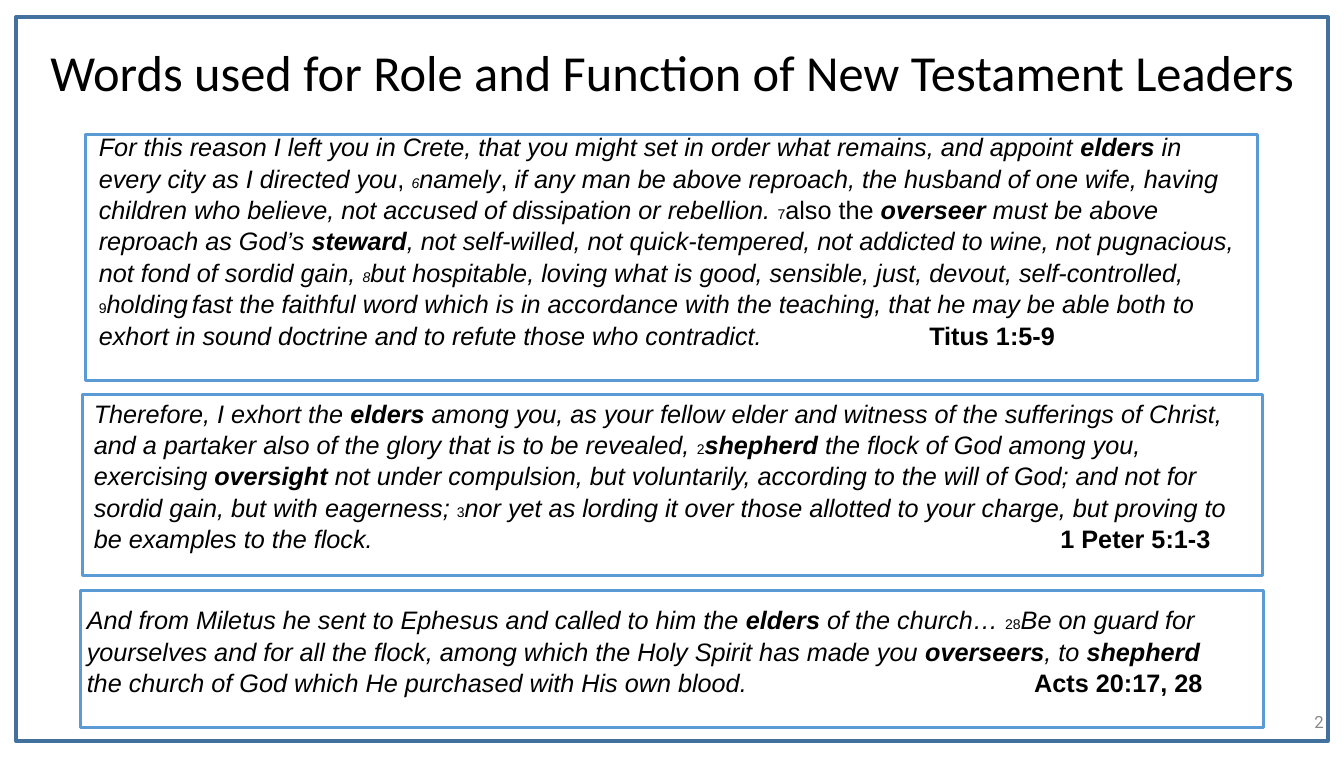
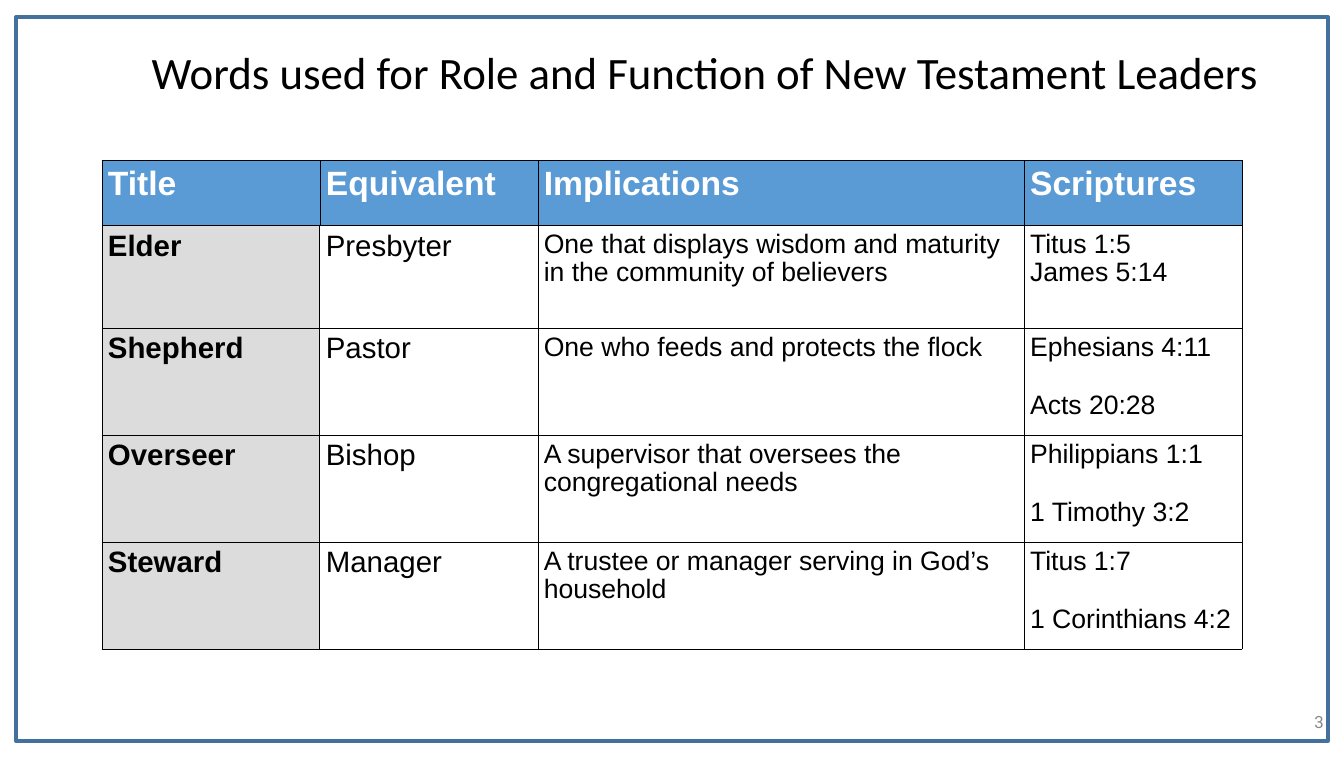
from pptx import Presentation
from pptx.dml.color import RGBColor
from pptx.enum.shapes import MSO_SHAPE
from pptx.enum.text import MSO_ANCHOR, PP_ALIGN
from pptx.oxml.ns import qn
from pptx.util import Inches, Pt
from lxml import etree

RECT = MSO_SHAPE.RECTANGLE
TOP, MIDDLE = MSO_ANCHOR.TOP, MSO_ANCHOR.MIDDLE
LEFT, CENTER, RIGHT = PP_ALIGN.LEFT, PP_ALIGN.CENTER, PP_ALIGN.RIGHT

TITLE = "Words used for Role and Function of New Testament Leaders"
BLACK, WHITE, BLUE, NAVY = "000000", "FFFFFF", "5B9BD5", "41719C"
SILVER, GREY = "DCDCDC", "898989"

# Run formats of the verses: plain, italic, bold, verse number
BASE = {"name": "Arial", "size": 18, "color": BLACK, "bold": False, "italic": False}
FORMS = {
    "n": BASE,
    "i": {**BASE, "italic": True},
    "b": {**BASE, "bold": True},
    "bi": {**BASE, "bold": True, "italic": True},
    "v": {**BASE, "size": 10},
    "vi": {**BASE, "size": 10, "italic": True},
}


def color(text):
    return RGBColor.from_string(text)


def add_xml(parent, tag, **values):
    node = etree.SubElement(parent, qn(tag))
    for key, value in values.items():
        node.set(key, str(value))
    return node


class Deck:
    def __init__(self):
        self.prs = Presentation()
        self.prs.slide_width, self.prs.slide_height = Inches(13.32), Inches(7.5)
        self.slide = None

    def start(self, number, spot, size):
        """Open a slide with its frame, title and number."""
        self.slide = self.prs.slides.add_slide(self.prs.slide_layouts[6])
        self.box((0.16, 0.17, 13, 7.17), NAVY, 3)
        look = {"name": "Calibri", "size": size, "color": BLACK}
        self.text(spot, [(look, TITLE)], align=CENTER, wrap=False, inset=0.05)
        look = {"name": "Roboto", "size": 12, "color": GREY}
        self.text((12.97, 7.02, 0.2, 0.27), [(look, str(number))], align=RIGHT,
                  wrap=False, inset=0.05, anchor=MIDDLE)

    def box(self, spot, line, width, fill=None):
        shape = self.slide.shapes.add_shape(RECT, *map(Inches, spot))
        shape.shadow.inherit = False
        if fill:
            shape.fill.solid()
            shape.fill.fore_color.rgb = color(fill)
        else:
            shape.fill.background()
        shape.line.color.rgb = color(line)
        shape.line.width = Pt(width)

    def pad(self, item, inset):
        for side in ("left", "top", "right", "bottom"):
            setattr(item, "margin_" + side, Inches(inset))

    def run(self, para, look, text):
        run = para.add_run()
        run.text = text
        for key, value in look.items():
            if key == "color":
                run.font.color.rgb = color(value)
            else:
                setattr(run.font, key, Pt(value) if key == "size" else value)

    def text(self, spot, runs, align=LEFT, wrap=True, inset=0.06, anchor=TOP,
             pitch=1.0, tab=None):
        frame = self.slide.shapes.add_textbox(*map(Inches, spot)).text_frame
        frame.word_wrap, frame.vertical_anchor = wrap, anchor
        self.pad(frame, inset)
        para = frame.paragraphs[0]
        para.alignment, para.line_spacing = align, pitch
        if tab:
            tabs = add_xml(para._p.get_or_add_pPr(), "a:tabLst")
            add_xml(tabs, "a:tab", pos=Inches(tab), algn="l")
        for look, words in runs:
            self.run(para, look, words)

    def verse(self, box, spot, tab, runs):
        self.box(box, BLUE, 2, WHITE)
        self.text(spot, [(FORMS[key], words) for key, words in runs],
                  pitch=1.04, tab=tab)

    def cell(self, cell, lines, look, fill, edges, gap):
        self.pad(cell, 0.06)
        props = cell._tc.get_or_add_tcPr()
        for side, width in edges.items():
            line = add_xml(props, "a:ln" + side, w=Pt(width))
            add_xml(add_xml(line, "a:solidFill"), "a:srgbClr", val=BLACK)
        cell.fill.solid()
        cell.fill.fore_color.rgb = color(fill)
        for at, words in enumerate(lines.split("\n")):
            para = cell.text_frame.paragraphs[0] if at == 0 else cell.text_frame.add_paragraph()
            para.line_spacing = 0.95
            if at:
                para.space_before = Pt(gap)
            self.run(para, look, words)

    def table(self, left, top, cols, rows, data):
        table = self.slide.shapes.add_table(
            len(rows), len(cols), Inches(left), Inches(top),
            Inches(sum(cols)), Inches(sum(rows))).table
        table.horz_banding = False
        for col, width in zip(table.columns, cols):
            col.width = Inches(width)
        for row, height in zip(table.rows, rows):
            row.height = Inches(height)
        for r, line in enumerate(data):
            for c, words in enumerate(line):
                head, first = r == 0, c == 0
                look = {"name": "Arial", "size": 24 if head else 21 if c < 2 else 19,
                        "color": WHITE if head else BLACK, "bold": head or first}
                fill = BLUE if head else SILVER if first else WHITE
                # Heavier rules under the header and beside the first column
                edges = {"L": 0.75 if c == 1 and not head else 0.35,
                         "R": 0.75 if first and not head else 0.35,
                         "T": 0.75 if r == 1 else 0.35,
                         "B": 0.75 if head else 0.35}
                self.cell(table.cell(r, c), words, look, fill, edges, 0 if r == 1 else 21)


TITUS = [
    ("i", "For this reason I left you in Crete, that you might set in order what remains, and appoint "),
    ("bi", "elders"), ("i", " in every city as I directed you"), ("n", ", "),
    ("vi", "6"), ("i", "namely"), ("n", ", "),
    ("i", "if any man be above reproach, the husband of one wife, having children who believe, "
          "not accused of dissipation or rebellion. "),
    ("v", "7"), ("n", "also the "), ("bi", "overseer"),
    ("i", " must be above reproach as God’s "), ("bi", "steward"),
    ("i", ", not self-willed, not quick-tempered, not addicted to wine, not pugnacious, "
          "not fond of sordid gain, "),
    ("vi", "8"), ("i", "but hospitable, loving what is good, sensible, just, devout, self-controlled, "),
    ("v", "9"), ("i", "holding"), ("v", " "),
    ("i", "fast the faithful word which is in accordance with the teaching, that he may be able "
          "both to exhort in sound doctrine and to refute those who contradict.\t"),
    ("b", "Titus 1:5-9"),
]
PETER = [
    ("i", "Therefore, I exhort the "), ("bi", "elders"),
    ("i", " among you, as your fellow elder and witness of the sufferings of Christ, "
          "and a partaker also of the glory that is to be revealed, "),
    ("v", "2"), ("bi", "shepherd "), ("i", "the flock of God among you, exercising "),
    ("bi", "oversight"),
    ("i", " not under compulsion, but voluntarily, according to the will of God; "
          "and not for sordid gain, but with eagerness; "),
    ("v", "3"),
    ("i", "nor yet as lording it over those allotted to your charge, "
          "but proving to be examples to the flock.\t"),
    ("b", "1 Peter 5:1-3"),
]
ACTS = [
    ("i", "And from Miletus he sent to Ephesus and called to him the "), ("bi", "elders "),
    ("i", "of the church… "), ("v", "28"),
    ("i", "Be on guard for yourselves and for all the flock, "
          "among which the Holy Spirit has made you "),
    ("bi", "overseers"), ("i", ", to "), ("bi", "shepherd"),
    ("i", " the church of God which He purchased with His own blood.\t"),
    ("b", "Acts 20:17, 28"),
]
ROLES = [
    ("Title", "Equivalent", "Implications", "Scriptures"),
    ("Elder", "Presbyter", "One that displays wisdom and maturity in the community of believers",
     "Titus 1:5\nJames 5:14"),
    ("Shepherd", "Pastor", "One who feeds and protects the flock", "Ephesians 4:11\nActs 20:28"),
    ("Overseer", "Bishop", "A supervisor that oversees the congregational needs",
     "Philippians 1:1\n1 Timothy 3:2"),
    ("Steward", "Manager", "A trustee or manager serving in God’s household",
     "Titus 1:7\n1 Corinthians 4:2"),
]


def main():
    deck = Deck()

    # Verses
    deck.start(2, (0.44, 0.36, 12.45, 1.21), 36)
    deck.verse((0.85, 1.33, 11.61, 2.44), (0.92, 1.23, 11.39, 2.63), 8.23, TITUS)
    deck.verse((0.82, 3.91, 11.69, 1.79), (0.87, 3.87, 11.57, 1.87), 9.58, PETER)
    deck.verse((0.8, 5.85, 11.72, 1.36), (0.8, 5.92, 11.45, 1.4), 9.39, ACTS)

    # Table of roles
    deck.start(3, (1.45, 0.39, 11.08, 1.09), 32)
    deck.table(1.01, 1.59, [2.16, 2.16, 4.82, 2.16], [0.64, 1.02] + [1.06] * 3, ROLES)

    deck.prs.save("out.pptx")


if __name__ == "__main__":
    main()
